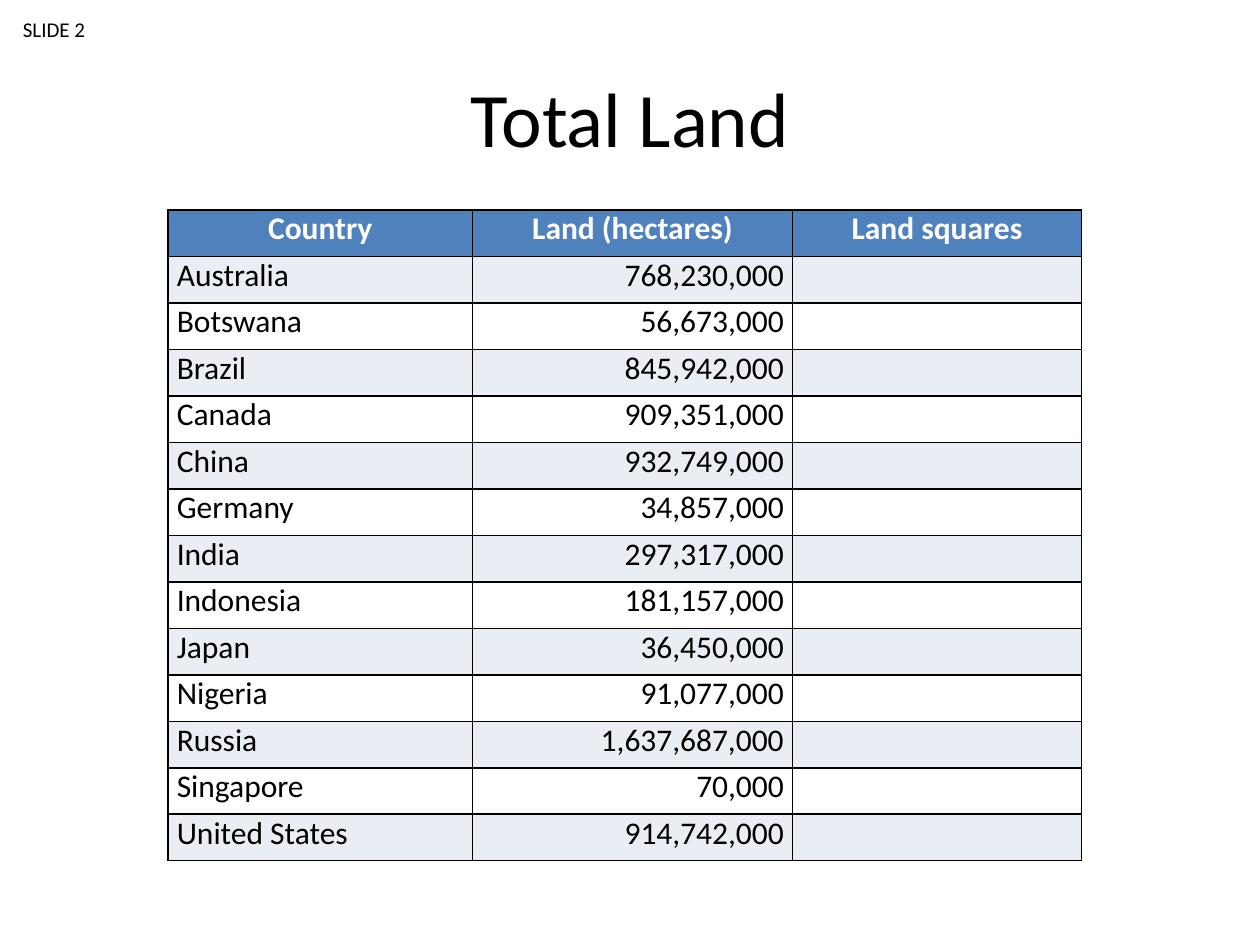
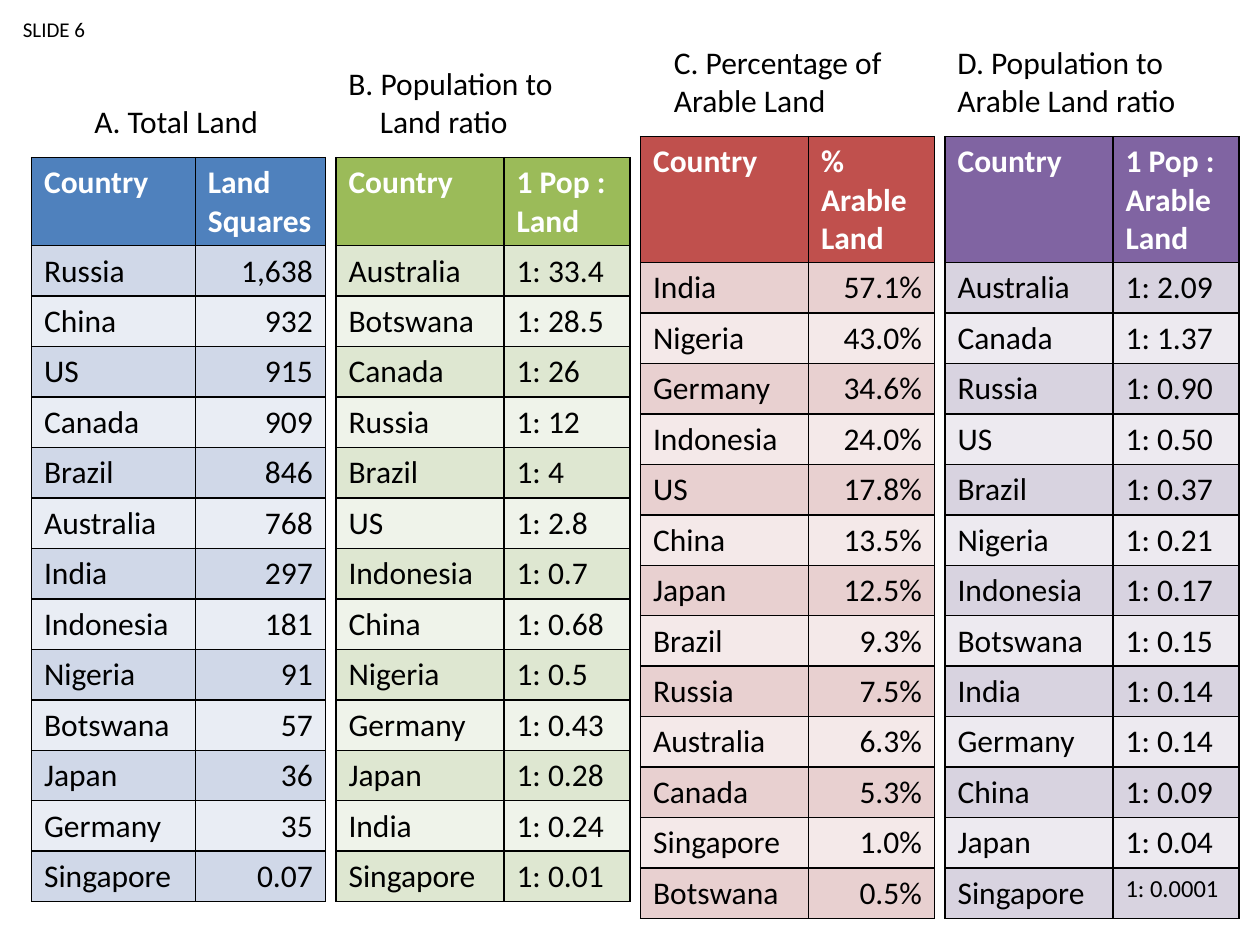
from dataclasses import dataclass

from lxml import etree
from pptx import Presentation
from pptx import util as u
from pptx.dml.color import RGBColor
from pptx.enum import text
from pptx.oxml.ns import qn


@dataclass(frozen=True)
class Theme:
    font: str = "Calibri"
    ink: str = "000000"
    paper: str = "FFFFFF"
    title: int = 44
    body: int = 18
    small: int = 14
    label: int = 12
    # Each palette: header, odd rows, even rows
    pale_blue: tuple = ("4F81BD", "E9EDF4", "FFFFFF")
    blue: tuple = ("4F81BD", "D0D8E8", "E9EDF4")
    green: tuple = ("9BBB59", "DEE7D1", "EFF3EA")
    red: tuple = ("C0504D", "E8D0D0", "F4E9E9")
    purple: tuple = ("8064A2", "D8D3E0", "EDEAF0")


theme = Theme()
LEFT, CENTER, RIGHT = text.PP_ALIGN.LEFT, text.PP_ALIGN.CENTER, text.PP_ALIGN.RIGHT

deck = Presentation()
deck.slide_width, deck.slide_height = u.Inches(10), u.Inches(7.5)
unit = deck.slide_width // 120  # the grid has 120 columns and 90 rows


def write(para, words, size=theme.body, color=theme.ink, bold=False, align=LEFT):
    para.alignment = align
    span = para.add_run()
    span.text = words
    span.font.name = theme.font
    span.font.size = u.Pt(size)
    span.font.bold = bold
    span.font.color.rgb = RGBColor.from_string(color)


def add_grid(page, left, top, columns, row_height, palette, rows,
             header_align=LEFT, value_align=LEFT, tight=False):
    frame = page.shapes.add_table(
        len(rows), len(columns), int(left * unit), int(top * unit),
        int(sum(columns) * unit), int(len(rows) * row_height * unit))
    table = frame.table
    for column, width in zip(table.columns, columns):
        column.width = int(width * unit)
    for r, values in enumerate(rows):
        table.rows[r].height = int(row_height * unit)
        fill = palette[0] if r == 0 else palette[2 - r % 2]
        for c, value in enumerate(values):
            cell = table.cell(r, c)
            if tight:
                cell.margin_left = cell.margin_right = u.Inches(0.07)
                cell.margin_top = cell.margin_bottom = 0
            para = cell.text_frame.paragraphs[0]
            if r == 0:
                write(para, value, color=theme.paper, bold=True, align=header_align)
            elif value:
                # Long ratios only fit their column in the smaller size
                size = theme.small if len(value) > 8 and value.startswith("1:") else theme.body
                write(para, value, size, align=value_align if c else LEFT)
            # Borders come before the fill in the cell properties
            props = cell._tc.get_or_add_tcPr()
            for side in ("a:lnL", "a:lnR", "a:lnT", "a:lnB"):
                line = etree.SubElement(props, qn(side), w=str(u.Pt(1)))
                solid = etree.SubElement(line, qn("a:solidFill"))
                etree.SubElement(solid, qn("a:srgbClr"), val=theme.ink)
            cell.fill.solid()
            cell.fill.fore_color.rgb = RGBColor.from_string(fill)


# Land table with a column left open for the squares
land_page = deck.slides.add_slide(deck.slide_layouts[5])
title = land_page.shapes.title
title.left, title.top = 6 * unit, int(3.6 * unit)
title.width, title.height = 108 * unit, 15 * unit
title.text_frame.vertical_anchor = text.MSO_ANCHOR.MIDDLE
write(title.text_frame.paragraphs[0], "Total Land", theme.title, align=CENTER)

hectares = [
    ("Australia", "768,230,000"), ("Botswana", "56,673,000"),
    ("Brazil", "845,942,000"), ("Canada", "909,351,000"),
    ("China", "932,749,000"), ("Germany", "34,857,000"),
    ("India", "297,317,000"), ("Indonesia", "181,157,000"),
    ("Japan", "36,450,000"), ("Nigeria", "91,077,000"),
    ("Russia", "1,637,687,000"), ("Singapore", "70,000"),
    ("United States", "914,742,000"),
]
land_rows = [("Country", "Land (hectares)", "Land squares")]
land_rows += [(country, area, "") for country, area in hectares]
add_grid(land_page, 16, 20, (29, 30.5, 27.5), 4.43, theme.pale_blue, land_rows,
         header_align=CENTER, value_align=RIGHT, tight=True)

# Four rankings side by side
ranking_page = deck.slides.add_slide(deck.slide_layouts[6])
# Each ranking: top, columns, palette, value alignment, value heading, rows
rankings = [
    (15, (15.6, 12.4), theme.blue, RIGHT, "Land Squares", [
        ("Russia", "1,638"), ("China", "932"), ("US", "915"), ("Canada", "909"),
        ("Brazil", "846"), ("Australia", "768"), ("India", "297"),
        ("Indonesia", "181"), ("Nigeria", "91"), ("Botswana", "57"),
        ("Japan", "36"), ("Germany", "35"), ("Singapore", "0.07")]),
    (15, (16, 12), theme.green, LEFT, "1 Pop : Land", [
        ("Australia", "1: 33.4"), ("Botswana", "1: 28.5"), ("Canada", "1: 26"),
        ("Russia", "1: 12"), ("Brazil", "1: 4"), ("US", "1: 2.8"),
        ("Indonesia", "1: 0.7"), ("China", "1: 0.68"), ("Nigeria", "1: 0.5"),
        ("Germany", "1: 0.43"), ("Japan", "1: 0.28"), ("India", "1: 0.24"),
        ("Singapore", "1: 0.01")]),
    (13, (16, 12), theme.red, RIGHT, "% Arable Land", [
        ("India", "57.1%"), ("Nigeria", "43.0%"), ("Germany", "34.6%"),
        ("Indonesia", "24.0%"), ("US", "17.8%"), ("China", "13.5%"),
        ("Japan", "12.5%"), ("Brazil", "9.3%"), ("Russia", "7.5%"),
        ("Australia", "6.3%"), ("Canada", "5.3%"), ("Singapore", "1.0%"),
        ("Botswana", "0.5%")]),
    (13, (16, 12), theme.purple, LEFT, "1 Pop : Arable Land", [
        ("Australia", "1: 2.09"), ("Canada", "1: 1.37"), ("Russia", "1: 0.90"),
        ("US", "1: 0.50"), ("Brazil", "1: 0.37"), ("Nigeria", "1: 0.21"),
        ("Indonesia", "1: 0.17"), ("Botswana", "1: 0.15"), ("India", "1: 0.14"),
        ("Germany", "1: 0.14"), ("China", "1: 0.09"), ("Japan", "1: 0.04"),
        ("Singapore", "1: 0.0001")]),
]
for i, (top, columns, palette, align, heading, rows) in enumerate(rankings):
    add_grid(ranking_page, 3 + 29 * i, top, columns, 4.8, palette,
             [("Country", heading)] + rows, value_align=align)

# Captions above the rankings and slide labels in the corner
# Each note: page, left, top, width, height, wraps, size, lines
notes = [
    (ranking_page, 7.8, 9.1, 18.2, 4.8, False, theme.body, ["A. Total Land"]),
    (ranking_page, 32, 5.5, 28, 8.5, True, theme.body, ["B. Population to", "Land ratio"]),
    (ranking_page, 63, 3.5, 23, 8.5, True, theme.body, ["C. Percentage of Arable Land"]),
    (ranking_page, 90, 3.5, 27, 8.5, True, theme.body, ["D. Population to Arable Land ratio"]),
    (land_page, 1, 1, 8.4, 3.6, False, theme.label, ["SLIDE 2"]),
    (ranking_page, 1, 1, 8.4, 3.6, False, theme.label, ["SLIDE 6"]),
]
for page, left, top, width, height, wraps, size, lines in notes:
    box = page.shapes.add_textbox(*(int(n * unit) for n in (left, top, width, height)))
    frame = box.text_frame
    frame.word_wrap = wraps
    frame.auto_size = text.MSO_AUTO_SIZE.SHAPE_TO_FIT_TEXT
    for n, line in enumerate(lines):
        para = frame.add_paragraph() if n else frame.paragraphs[0]
        write(para, line, size)
        if n:
            para._p.get_or_add_pPr().set("marL", str(u.Inches(0.25)))

deck.save("out.pptx")
